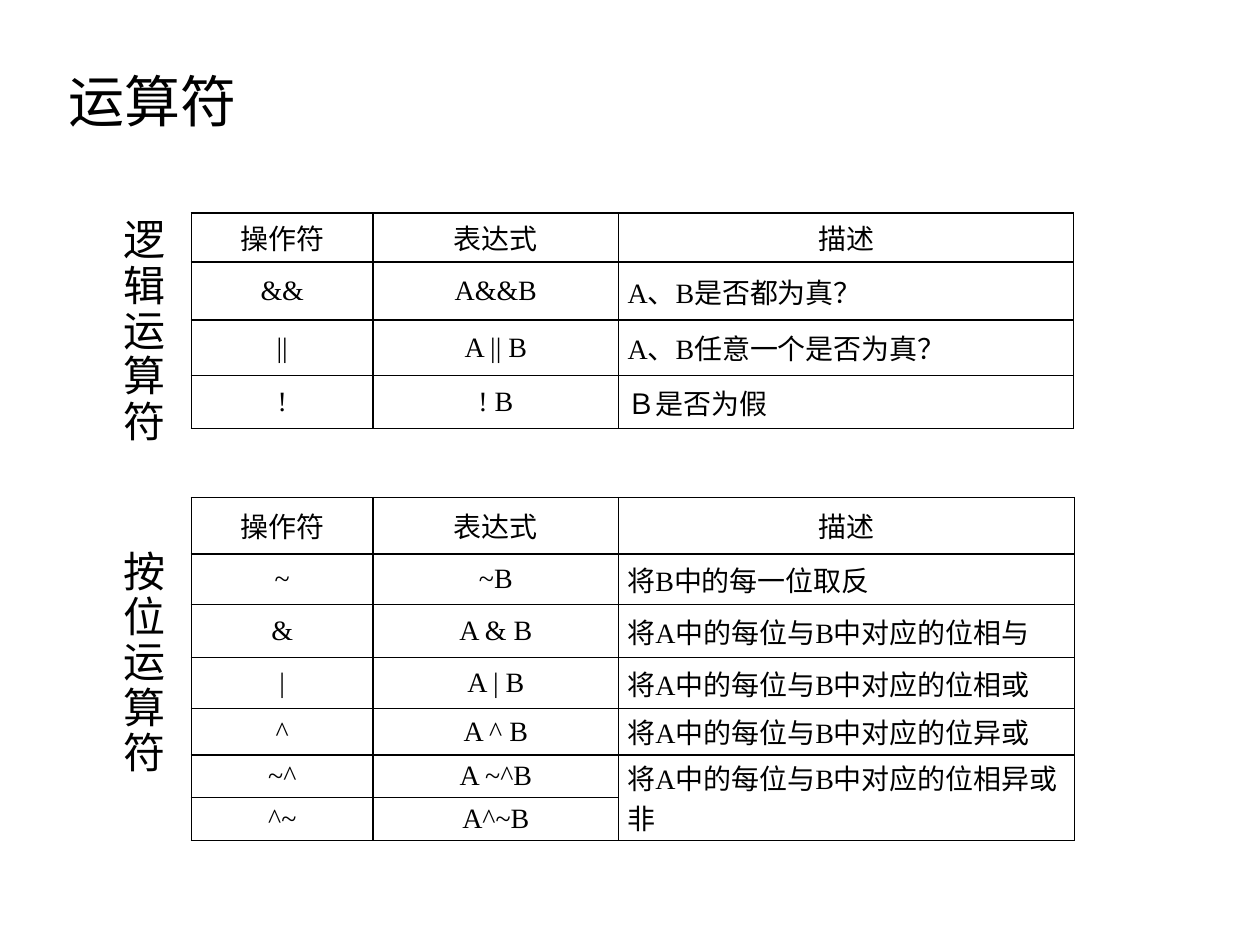
from lxml import etree
from pptx import Presentation
from pptx.dml.color import RGBColor
from pptx.enum.text import MSO_ANCHOR, PP_ALIGN
from pptx.oxml.ns import qn
from pptx.util import Cm, Pt

LEFT, CENTER, RIGHT = PP_ALIGN.LEFT, PP_ALIGN.CENTER, PP_ALIGN.RIGHT
MIDDLE = MSO_ANCHOR.MIDDLE
INK = "000000"
SERIF, SANS, HAN = "Times New Roman", "Calibri", "Noto Sans CJK SC"

HEAD = ("操作符", "表达式", "描述")
LOGIC = [
    HEAD,
    ("&&", "A&&B", "A、B是否都为真？"),
    ("||", "A || B", "A、B任意一个是否为真？"),
    ("!", "! B", "Ｂ是否为假"),
]
BITWISE = [
    HEAD,
    ("~", "~B", "将B中的每一位取反"),
    ("&", "A & B", "将A中的每位与B中对应的位相与"),
    ("|", "A | B", "将A中的每位与B中对应的位相或"),
    ("^", "A ^ B", "将A中的每位与B中对应的位异或"),
    ("~^", "A ~^B", "将A中的每位与B中对应的位相异或非"),
    ("^~", "A^~B", None),
]


def color(value):
    return RGBColor.from_string(value)


def write(frame, text, size, font, align):
    para = frame.paragraphs[0]
    para.alignment = align
    run = para.add_run()
    run.text = text
    run.font.size = Pt(size)
    run.font.name = font
    run.font.color.rgb = color(INK)
    return para


def place(shape, left, top, width, height):
    shape.left, shape.top = Cm(left), Cm(top)
    shape.width, shape.height = Cm(width), Cm(height)


def add_title(slide, text, box):
    title = slide.shapes.title
    place(title, *box)
    frame = title.text_frame
    frame.vertical_anchor = MIDDLE
    write(frame, text, 32, SANS, LEFT).line_spacing = 0.9


def add_label(slide, text, box):
    """Narrow box that wraps to one character a line."""
    frame = slide.shapes.add_textbox(*map(Cm, box)).text_frame
    frame.word_wrap = True
    write(frame, text, 24, HAN, RIGHT).line_spacing = Pt(25.9)


def add_border(cell):
    props = cell._tc.get_or_add_tcPr()
    for side in ("a:lnL", "a:lnR", "a:lnT", "a:lnB"):
        line = etree.SubElement(props, qn(side), w=str(Pt(1)))
        fill = etree.SubElement(line, qn("a:solidFill"))
        etree.SubElement(fill, qn("a:srgbClr"), val=INK)


def style_cell(cell):
    cell.margin_left = cell.margin_right = Cm(0.18)
    cell.margin_top = cell.margin_bottom = 0
    cell.vertical_anchor = MIDDLE
    add_border(cell)
    cell.fill.background()


def add_grid(slide, rows, left, top, widths, heights):
    """Bordered table; None joins a cell to the one above."""
    box = (left, top, sum(widths), sum(heights))
    table = slide.shapes.add_table(
        len(rows), len(widths), *map(Cm, box)).table
    table.first_row = table.horz_banding = False
    for col, width in zip(table.columns, widths):
        col.width = Cm(width)
    for row, height in zip(table.rows, heights):
        row.height = Cm(height)
    for r, texts in enumerate(rows):
        for c, text in enumerate(texts):
            cell = table.cell(r, c)
            style_cell(cell)
            if text is None:
                table.cell(r - 1, c).merge(cell)
                continue
            align = LEFT if r and c == 2 else CENTER
            write(cell.text_frame, text, 16, SERIF, align)


def main():
    deck = Presentation()
    deck.slide_width, deck.slide_height = Cm(25.4), Cm(19.05)
    slide = deck.slides.add_slide(deck.slide_layouts[5])
    add_title(slide, "运算符", (1.12, 1.02, 21.89, 2.16))
    add_grid(slide, BITWISE, 3.86, 10.03, (3.66, 4.95, 9.19),
             (1.14, 1.02, 1.07, 1.02, 0.94, 0.86, 0.86))
    add_grid(slide, LOGIC, 3.86, 4.29, (3.66, 4.95, 9.17),
             (0.99, 1.17, 1.12, 1.07))
    add_label(slide, "逻辑运算符", (2.24, 4.29, 1.35, 4.37))
    add_label(slide, "按位运算符", (2.24, 10.97, 1.35, 5))
    deck.save("out.pptx")


if __name__ == "__main__":
    main()
